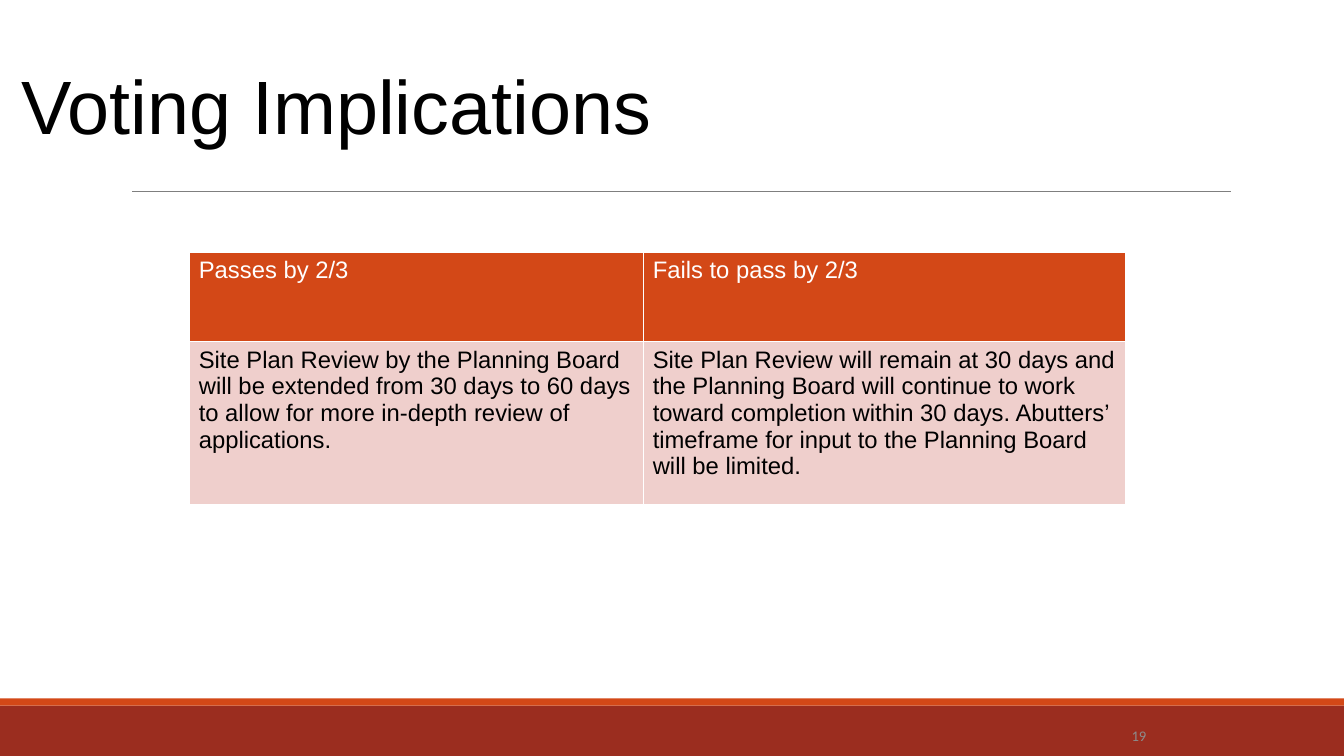
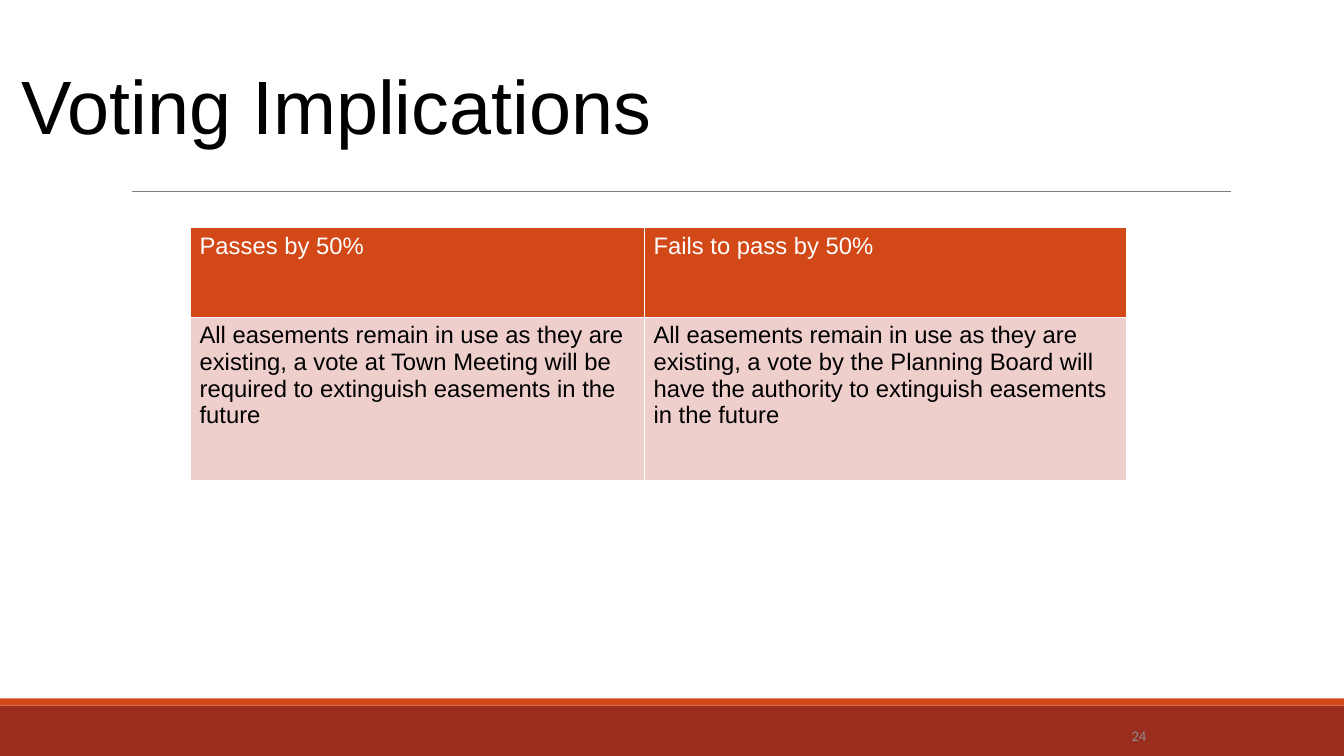
from dataclasses import dataclass

from pptx import Presentation
from pptx.dml.color import RGBColor
from pptx.enum.shapes import MSO_CONNECTOR, MSO_SHAPE
from pptx.enum.text import MSO_ANCHOR, MSO_AUTO_SIZE, PP_ALIGN
from pptx.oxml.ns import qn
from pptx.slide import Slide
from pptx.table import _Cell as Cell
from pptx.util import Cm, Pt
from lxml.etree import SubElement

BLACK = RGBColor(0x00, 0x00, 0x00)
WHITE = RGBColor(0xFF, 0xFF, 0xFF)
BRICK = RGBColor(0x9B, 0x2D, 0x1F)
ORANGE = RGBColor(0xD3, 0x48, 0x17)
PINK = RGBColor(0xEF, 0xCF, 0xCC)
RULE_GREY = RGBColor(0x7F, 0x7F, 0x7F)
NUMBER_GREY = RGBColor(0x8C, 0x8C, 0x8C)

SLIDE_W, SLIDE_H = Cm(33.87), Cm(19.05)
COLUMN_WIDTHS = Cm(11.44), Cm(12.15)
ROW_HEIGHTS = Cm(2.26), Cm(4.11)
ROW_COLOURS = (ORANGE, WHITE), (PINK, BLACK)  # fill, text


@dataclass(frozen=True)
class Band:
    top: Cm
    height: Cm
    colour: RGBColor


@dataclass(frozen=True)
class Vote:
    number: int
    left: Cm
    top: Cm
    rows: tuple[tuple[str, str], tuple[str, str]]


BANDS = (
    Band(Cm(17.78), Cm(1.27), BRICK),
    Band(Cm(17.6), Cm(0.18), ORANGE),
)

VOTES = (
    Vote(19, Cm(4.78), Cm(6.35), (
        ("Passes by 2/3", "Fails to pass by 2/3"),
        ("Site Plan Review by the Planning Board will be extended from 30 days "
         "to 60 days to allow for more in-depth review of applications.",
         "Site Plan Review will remain at 30 days and the Planning Board will "
         "continue to work toward completion within 30 days. Abutters’ "
         "timeframe for input to the Planning Board will be limited."),
    )),
    Vote(24, Cm(4.8), Cm(5.74), (
        ("Passes by 50%", "Fails to pass by 50%"),
        ("All easements remain in use as they are existing, a vote at Town "
         "Meeting will be required to extinguish easements in the future",
         "All easements remain in use as they are existing, a vote by the "
         "Planning Board will have the authority to extinguish easements in "
         "the future"),
    )),
)


def style_text(p, size: float, colour: RGBColor, name: str = "Arial") -> None:
    for r in p.runs:
        r.font.size = Pt(size)
        r.font.name = name
        r.font.bold = False
        r.font.color.rgb = colour


def add_frame(s: Slide, number: int) -> None:
    """Draw the bands, the rule, the title and the slide number."""
    for band in BANDS:
        sp = s.shapes.add_shape(MSO_SHAPE.RECTANGLE, 0, band.top, SLIDE_W, band.height)
        sp.shadow.inherit = False
        sp.fill.solid()
        sp.fill.fore_color.rgb = band.colour
        sp.line.fill.background()

    # Rule under the title
    rule = s.shapes.add_connector(
        MSO_CONNECTOR.STRAIGHT, Cm(3.33), Cm(4.83), Cm(31.01), Cm(4.83))
    rule.line.color.rgb = RULE_GREY
    rule.line.width = Pt(0.75)
    SubElement(rule._element.spPr, qn("a:effectLst"))

    # Title
    title = s.shapes.title
    title.left, title.top, title.width, title.height = Cm(0.28), Cm(1.7), Cm(22.89), Cm(4.14)
    tf = title.text_frame
    tf.text = "Voting Implications"
    tf.vertical_anchor = MSO_ANCHOR.TOP
    tf.auto_size = MSO_AUTO_SIZE.NONE
    p = tf.paragraphs[0]
    p.alignment = PP_ALIGN.LEFT
    p.line_spacing = 0.85
    style_text(p, 54, BLACK)

    # Slide number
    tf = s.shapes.add_textbox(Cm(23.93), Cm(18.03), Cm(5.21), Cm(1.02)).text_frame
    tf.word_wrap = True
    tf.vertical_anchor = MSO_ANCHOR.MIDDLE
    tf.text = str(number)
    p = tf.paragraphs[0]
    p.alignment = PP_ALIGN.RIGHT
    p.space_after = Pt(6)
    style_text(p, 10.5, NUMBER_GREY, "Calibri")


def fill_cell(cell: Cell, text: str, fill: RGBColor, colour: RGBColor) -> None:
    cell.text = text
    style_text(cell.text_frame.paragraphs[0], 17, colour)
    cell.margin_left = cell.margin_right = Cm(0.23)
    cell.margin_top = cell.margin_bottom = Cm(0.12)

    # Borders come before the fill in the cell properties
    tc_pr = cell._tc.get_or_add_tcPr()
    for side in ("lnL", "lnR", "lnT", "lnB"):
        ln = SubElement(tc_pr, qn(f"a:{side}"), w=str(Pt(1)))
        SubElement(SubElement(ln, qn("a:solidFill")), qn("a:srgbClr"), val=str(WHITE))
    cell.fill.solid()
    cell.fill.fore_color.rgb = fill


def add_vote_table(s: Slide, vote: Vote) -> None:
    table = s.shapes.add_table(
        len(ROW_HEIGHTS), len(COLUMN_WIDTHS), vote.left, vote.top,
        sum(COLUMN_WIDTHS), sum(ROW_HEIGHTS)).table
    for column, width in zip(table.columns, COLUMN_WIDTHS):
        column.width = width
    for row, height, texts, colours in zip(table.rows, ROW_HEIGHTS, vote.rows, ROW_COLOURS):
        row.height = height
        for cell, text in zip(row.cells, texts):
            fill_cell(cell, text, *colours)


def main() -> None:
    prs = Presentation()
    prs.slide_width, prs.slide_height = SLIDE_W, SLIDE_H
    for vote in VOTES:
        s = prs.slides.add_slide(prs.slide_layouts[5])
        add_frame(s, vote.number)
        add_vote_table(s, vote)
    prs.save("out.pptx")


if __name__ == "__main__":
    main()
